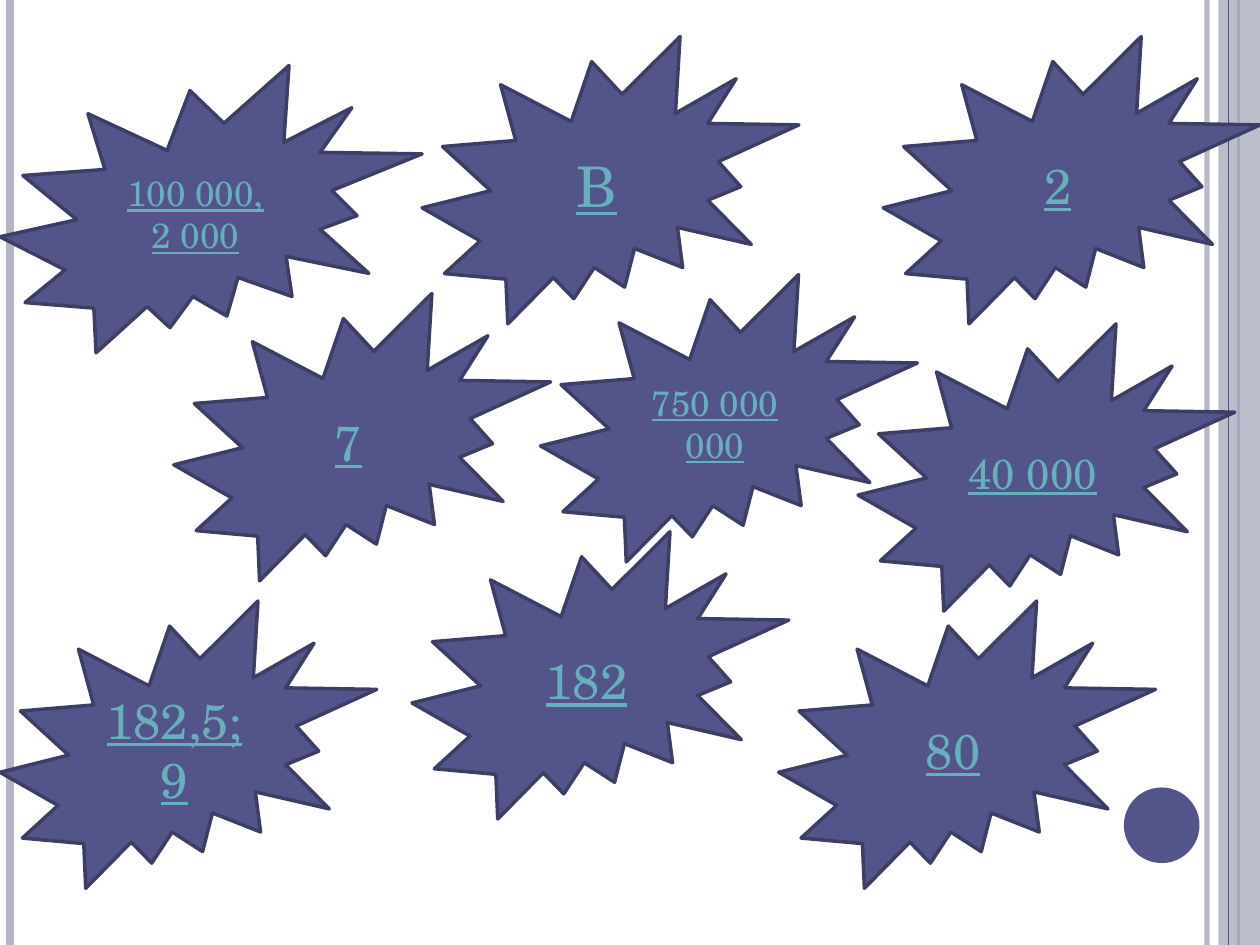
from dataclasses import dataclass

from lxml.etree import SubElement
from pptx import Presentation
from pptx.dml.color import RGBColor
from pptx.enum.shapes import MSO_CONNECTOR, MSO_SHAPE
from pptx.enum.text import MSO_ANCHOR, PP_ALIGN
from pptx.oxml.ns import qn
from pptx.util import Inches, Pt


@dataclass(frozen=True)
class Theme:
    accent: RGBColor = RGBColor.from_string("53548A")
    outline: RGBColor = RGBColor.from_string("3D3E66")
    stripe: RGBColor = RGBColor.from_string("B3B4C4")
    answer: RGBColor = RGBColor.from_string("67AFBD")
    font: str = "TeX Gyre Schola"
    small: int = 20
    medium: int = 24
    large: int = 28
    huge: int = 32


theme = Theme()
deck = Presentation()
deck.slide_width, deck.slide_height = Inches(10), Inches(7.5)
page = deck.slides.add_slide(deck.slide_layouts[6])


def set_opacity(color_format, percent):
    color = color_format._xFill.find(qn("a:srgbClr"))
    SubElement(color, qn("a:alpha")).set("val", str(percent * 1000))


def add_filled(preset, left, top, width, height, color):
    shape = page.shapes.add_shape(
        preset, Inches(left), Inches(top), Inches(width), Inches(height))
    shape.shadow.inherit = False
    shape.fill.solid()
    shape.fill.fore_color.rgb = color
    shape.line.fill.background()
    return shape


# Vertical rules: x, color, weight, opacity; the band covers all but the last
rules = [
    (9.58, theme.stripe, 3, 93),
    (0.08, theme.stripe, 4.5, 100),
    (9.83, theme.accent, 1.5, 100),
    (9.75, theme.accent, 0.75, 100),
]
for x, color, weight, opacity in rules:
    if x == 9.75:
        # Translucent band along the right edge
        band = add_filled(MSO_SHAPE.RECTANGLE, 9.67, 0, 0.33, 7.5, theme.stripe)
        set_opacity(band.fill.fore_color, 87)
    rule = page.shapes.add_connector(
        MSO_CONNECTOR.STRAIGHT, Inches(x), 0, Inches(x), deck.slide_height)
    rule.line.color.rgb = color
    rule.line.width = Pt(weight)
    if opacity < 100:
        set_opacity(rule.line.fill.fore_color, opacity)
    SubElement(rule._element.spPr, qn("a:effectLst"))

# Corner dot
add_filled(MSO_SHAPE.OVAL, 8.92, 6.25, 0.6, 0.6, theme.accent)

# Answer bursts: text, left, top, width, type size
burst_width, burst_height = 2.99, 2.28
bursts = [
    ("В", 3.35, 0.29, burst_width, theme.huge),
    ("750 000 000", 4.29, 2.18, burst_width, theme.small),
    ("100 000, 2 000", 0, 0.52, 3.35, theme.small),
    ("80", 6.18, 4.77, burst_width, theme.large),
    ("182,5; 9", 0, 4.77, burst_width, theme.large),
    ("182", 3.27, 4.22, burst_width, theme.large),
    ("40 000", 6.81, 2.57, burst_width, theme.medium),
    ("7", 1.38, 2.33, burst_width, theme.large),
    ("2", 7.01, 0.29, burst_width, theme.large),
]
for text, left, top, width, size in bursts:
    burst = add_filled(
        MSO_SHAPE.EXPLOSION2, left, top, width, burst_height, theme.accent)
    burst.line.color.rgb = theme.outline
    burst.line.width = Pt(2)
    frame = burst.text_frame
    frame.text = text
    frame.word_wrap = True
    frame.vertical_anchor = MSO_ANCHOR.MIDDLE
    para = frame.paragraphs[0]
    para.alignment = PP_ALIGN.CENTER
    font = para.runs[0].font
    font.name, font.size, font.underline = theme.font, Pt(size), True
    font.color.rgb = theme.answer

deck.save("out.pptx")
